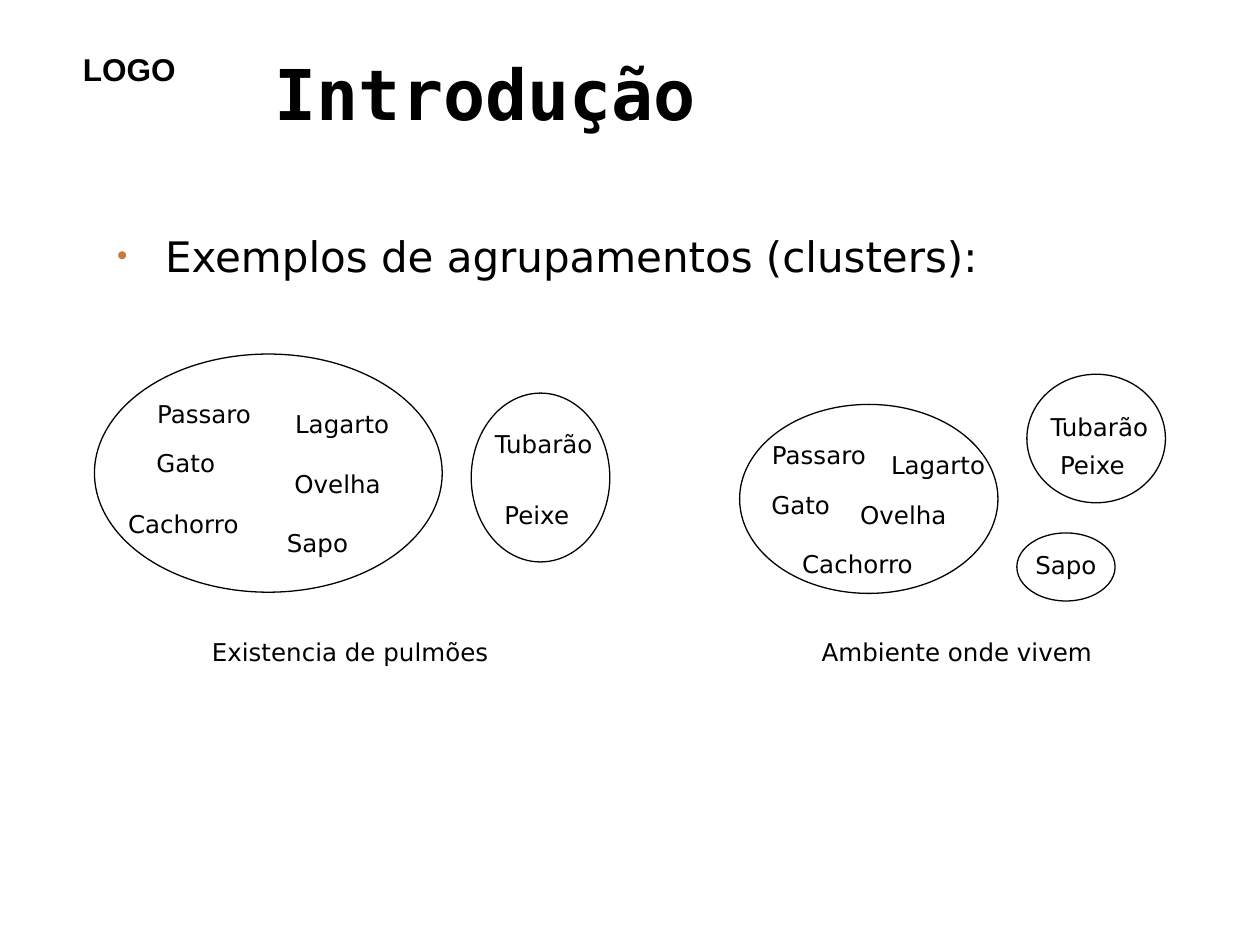
from typing import NamedTuple

from lxml import etree
from pptx import Presentation
from pptx.dml.color import RGBColor
from pptx.enum import shapes, text
from pptx.oxml import ns
from pptx.util import Inches, Pt

BLACK = RGBColor(0x00, 0x00, 0x00)
ORANGE = RGBColor(0xC4, 0x7C, 0x40)
SANS = "DejaVu Sans"
MONO = "DejaVu Sans Mono"


class Box(NamedTuple):
    left: float
    top: float
    width: float
    height: float


class Label(NamedTuple):
    words: str
    left: float
    top: float


class Group(NamedTuple):
    labels: list[Label]
    rings: list[Box]


WIDTHS = {
    "Gato": 0.67,
    "Cachorro": 1.09,
    "Peixe": 0.72,
    "Sapo": 0.7,
    "Lagarto": 0.95,
    "Tubarão": 0.99,
    "Passaro": 0.96,
    "Ovelha": 0.9,
    "Existencia de pulmões": 2.4,
    "Ambiente onde vivem": 2.35,
}

GROUPS = [
    Group(
        [
            Label("Gato", 1.14, 3.51),
            Label("Cachorro", 0.91, 3.99),
            Label("Peixe", 3.9, 3.92),
            Label("Sapo", 2.17, 4.14),
            Label("Lagarto", 2.24, 3.2),
            Label("Tubarão", 3.82, 3.36),
            Label("Passaro", 1.14, 3.12),
            Label("Ovelha", 2.23, 3.67),
            Label("Existencia de pulmões", 1.58, 5.01),
        ],
        [Box(0.75, 2.81, 2.76, 1.89), Box(3.74, 3.12, 1.1, 1.34)],
    ),
    Group(
        [
            Label("Gato", 6.02, 3.84),
            Label("Cachorro", 6.26, 4.31),
            Label("Peixe", 8.31, 3.52),
            Label("Sapo", 8.11, 4.32),
            Label("Lagarto", 6.97, 3.52),
            Label("Tubarão", 8.23, 3.22),
            Label("Passaro", 6.02, 3.44),
            Label("Ovelha", 6.72, 3.92),
            Label("Ambiente onde vivem", 6.42, 5.01),
        ],
        [
            Box(5.87, 3.21, 2.05, 1.5),
            Box(8.15, 2.97, 1.1, 1.02),
            Box(8.07, 4.23, 0.78, 0.54),
        ],
    ),
]


def write(shape, words: str, *, size: float = 14, font: str = SANS,
          bold: bool = False, align=text.PP_ALIGN.LEFT,
          anchor=text.MSO_ANCHOR.TOP, wrap: bool = True,
          fit=text.MSO_AUTO_SIZE.NONE):
    frame = shape.text_frame
    frame.word_wrap = wrap
    frame.auto_size = fit
    frame.vertical_anchor = anchor
    para = frame.paragraphs[0]
    para.alignment = align
    para.space_before = Pt(0)
    run = para.add_run()
    run.text = words
    run.font.size = Pt(size)
    run.font.name = font
    run.font.bold = bold
    run.font.color.rgb = BLACK
    return para


def place(shape, box: Box) -> None:
    shape.left, shape.top, shape.width, shape.height = map(Inches, box)


def note(slide, words: str, box: Box, **style) -> None:
    shape = slide.shapes.add_textbox(*map(Inches, box))
    write(shape, words, wrap=False,
          fit=text.MSO_AUTO_SIZE.SHAPE_TO_FIT_TEXT, **style)


def ring(slide, box: Box) -> None:
    shape = slide.shapes.add_shape(shapes.MSO_SHAPE.OVAL, *map(Inches, box))
    shape.shadow.inherit = False
    shape.fill.background()
    shape.line.color.rgb = BLACK
    shape.line.width = Pt(0.75)


def bullet(para) -> None:
    props = para._p.get_or_add_pPr()
    props.set("marL", str(Inches(0.38)))
    props.set("indent", str(-Inches(0.38)))
    tint = etree.SubElement(props, ns.qn("a:buClr"))
    etree.SubElement(tint, ns.qn("a:srgbClr"), val=str(ORANGE))
    etree.SubElement(props, ns.qn("a:buSzPct"), val="70000")
    etree.SubElement(props, ns.qn("a:buChar"), char="•")


def main() -> None:
    deck = Presentation()
    deck.slide_width, deck.slide_height = Inches(10), Inches(7.5)
    slide = deck.slides.add_slide(deck.slide_layouts[1])
    title, body = slide.placeholders

    note(slide, "LOGO", Box(0.56, 0.35, 0.94, 0.4),
         size=18, font="Arial", bold=True)
    place(title, Box(2.08, 0.25, 7.42, 0.97))
    write(title, "Introdução", size=40, font=MONO, bold=True,
          anchor=text.MSO_ANCHOR.MIDDLE)
    place(body, Box(0.83, 1.78, 8.27, 4.49))
    bullet(write(body, "Exemplos de agrupamentos (clusters):", size=24))

    for group in GROUPS:
        for words, left, top in group.labels:
            note(slide, words, Box(left, top, WIDTHS[words], 0.34),
                 align=text.PP_ALIGN.CENTER)
        for box in group.rings:
            ring(slide, box)

    deck.save("out.pptx")


if __name__ == "__main__":
    main()
